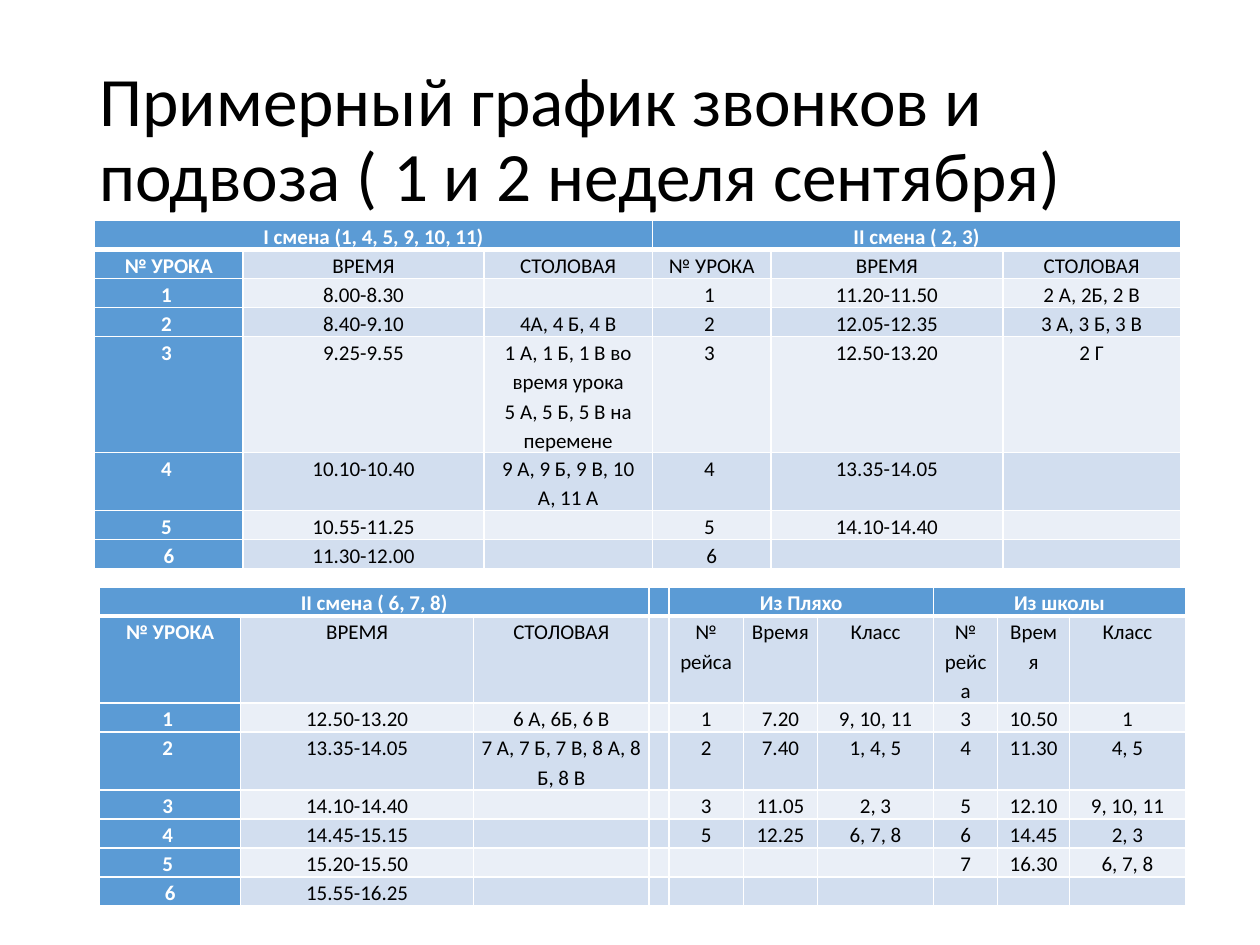
from lxml.etree import SubElement
from pptx import Presentation
from pptx.dml.color import RGBColor
from pptx.enum.text import MSO_ANCHOR, PP_ALIGN
from pptx.oxml.ns import qn
from pptx.util import Inches, Pt

FONT = "Calibri"
WHITE, BLACK, HEADER = "FFFFFF", "000000", "5B9BD5"
BANDS = ["EAEFF7", "D2DEEF"]
LINE = 0.23  # height of a row with one line of text


def rgb(value):
    return RGBColor.from_string(value)


def add_borders(cell, widths):
    """Draw white borders; widths are points for left, right, top, bottom."""
    properties = cell._tc.get_or_add_tcPr()
    for position, (side, width) in enumerate(zip("LRTB", widths)):
        border = properties.makeelement(qn(f"a:ln{side}"), {"w": str(Pt(width))})
        fill = SubElement(border, qn("a:solidFill"))
        SubElement(fill, qn("a:srgbClr"), val=WHITE)
        properties.insert(position, border)


schedules = [
    {
        "at": (0.75, 1.75),
        "columns": [1.18, 1.91, 1.34, 0.94, 1.84, 1.41],
        "tall_rows": {4: 0.9, 5: 0.45},
        "spans": [0, 3],
        "rows": [
            ["I смена (1, 4, 5, 9, 10, 11)", "", "", "II смена ( 2, 3)", "", ""],
            ["№ УРОКА", "ВРЕМЯ", "СТОЛОВАЯ", "№ УРОКА", "ВРЕМЯ", "СТОЛОВАЯ"],
            ["1 ", "8.00-8.30", "", "1 ", "11.20-11.50", "2 А, 2Б, 2 В"],
            ["2 ", "8.40-9.10", "4А, 4 Б, 4 В", "2 ", "12.05-12.35", "3 А, 3 Б, 3 В"],
            ["3 ", "9.25-9.55",
             "1 А, 1 Б, 1 В во время урока\n5 А, 5 Б, 5 В на перемене",
             "3 ", "12.50-13.20", "2 Г"],
            ["4 ", "10.10-10.40", "9 А, 9 Б, 9 В, 10 А, 11 А", "4 ", "13.35-14.05", ""],
            ["5 ", "10.55-11.25", "", "5 ", "14.10-14.40", ""],
            ["6", "11.30-12.00", "", "6", "", ""],
        ],
    },
    {
        "at": (0.79, 4.66),
        "columns": [1.12, 1.85, 1.39, 0.16, 0.59, 0.59, 0.92, 0.51, 0.57, 0.92],
        "tall_rows": {1: 0.68, 3: 0.45},
        "spans": [0, 4, 7],
        "rows": [
            ["II смена ( 6, 7, 8)", "", "", "", "Из Пляхо", "", "", "Из школы", "", ""],
            ["№ УРОКА", "ВРЕМЯ", "СТОЛОВАЯ", "", "№ рейса", "Время", "Класс",
             "№ рейса", "Время", "Класс"],
            ["1 ", "12.50-13.20", "6 А, 6Б, 6 В", "", "1", "7.20", "9, 10, 11",
             "3", "10.50", "1"],
            ["2 ", "13.35-14.05", "7 А, 7 Б, 7 В, 8 А, 8 Б, 8 В", "", "2", "7.40",
             "1, 4, 5", "4", "11.30", "4, 5"],
            ["3 ", "14.10-14.40", "", "", "3", "11.05", "2, 3", "5", "12.10", "9, 10, 11"],
            ["4 ", "14.45-15.15", "", "", "5", "12.25", "6, 7, 8", "6", "14.45", "2, 3"],
            ["5 ", "15.20-15.50", "", "", "", "", "", "7", "16.30", "6, 7, 8"],
            ["6", "15.55-16.25", "", "", "", "", "", "", "", ""],
        ],
    },
]

prs = Presentation()
prs.slide_width, prs.slide_height = Inches(10), Inches(7.5)
slide = prs.slides.add_slide(prs.slide_layouts[6])

title = slide.shapes.add_textbox(Inches(0.69), Inches(0.4), Inches(8.62), Inches(1.45))
title_frame = title.text_frame
title_frame.word_wrap = True
title_frame.vertical_anchor = MSO_ANCHOR.MIDDLE
heading = title_frame.paragraphs[0]
heading.text = "Примерный график звонков и подвоза ( 1 и 2 неделя сентября)"
heading.line_spacing = 0.9
heading.font.name, heading.font.size = FONT, Pt(39.6)
heading.font.color.rgb = rgb(BLACK)

for schedule in schedules:
    rows, columns = schedule["rows"], schedule["columns"]
    heights = [schedule["tall_rows"].get(r, LINE) for r in range(len(rows))]
    left, top = schedule["at"]
    table = slide.shapes.add_table(
        len(rows), len(columns), Inches(left), Inches(top),
        Inches(sum(columns)), Inches(sum(heights))).table
    for column, width in zip(table.columns, columns):
        column.width = Inches(width)
    for row, height in zip(table.rows, heights):
        row.height = Inches(height)
    for start in schedule["spans"]:
        table.cell(0, start).merge(table.cell(0, start + 2))

    for r, row in enumerate(rows):
        for c, text in enumerate(row):
            cell = table.cell(r, c)
            is_header = r == 0 or c == 0
            cell.margin_left = cell.margin_right = Inches(0.06)
            cell.margin_top = cell.margin_bottom = 0
            cell.fill.solid()
            cell.fill.fore_color.rgb = rgb(HEADER if is_header else BANDS[r % 2])
            add_borders(cell, (1, 1, 3 if r == 1 else 1, 3 if r == 0 else 1))
            cell.text = text
            for paragraph in cell.text_frame.paragraphs:
                paragraph.alignment = PP_ALIGN.CENTER
                paragraph.line_spacing = 1.15
                paragraph.font.name, paragraph.font.size = FONT, Pt(12)
                paragraph.font.bold = is_header
                paragraph.font.color.rgb = rgb(WHITE if is_header else BLACK)
                if not text:  # keeps an empty cell from growing its row
                    SubElement(paragraph._p, qn("a:endParaRPr"), sz="1200")

prs.save("out.pptx")
